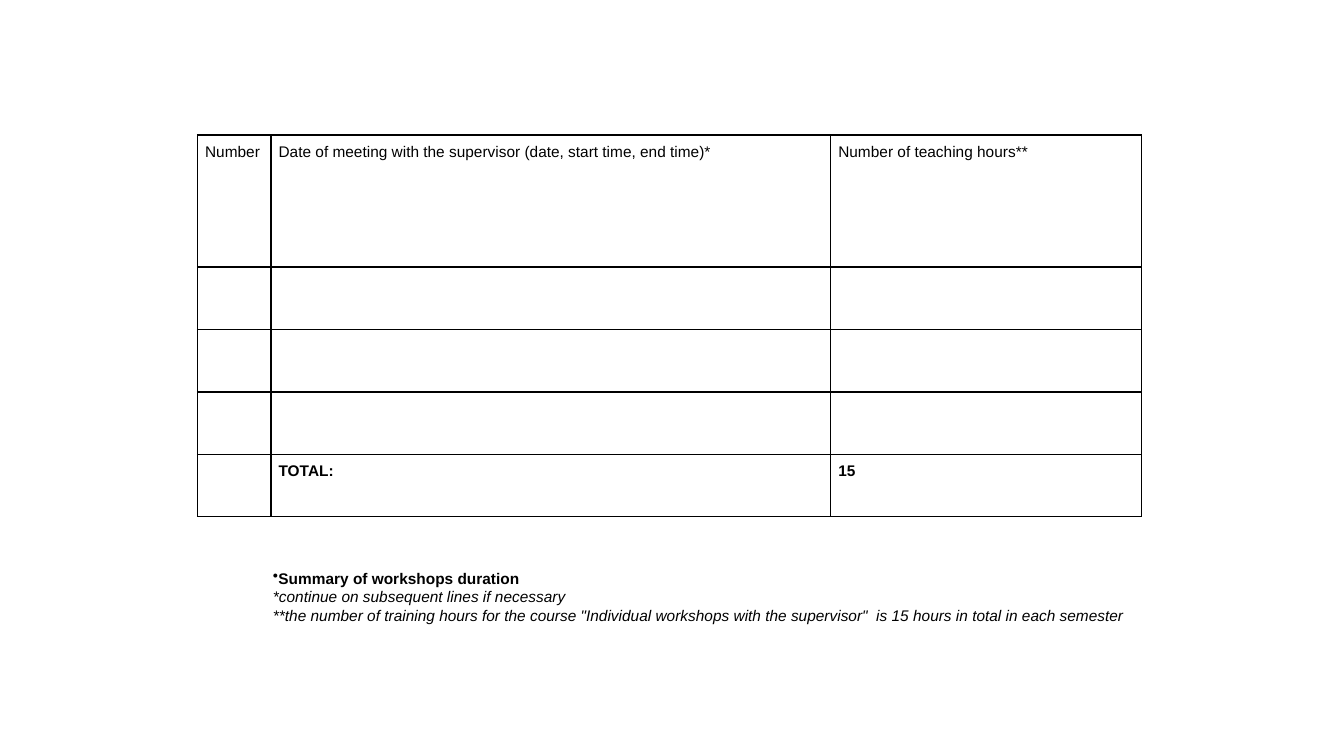
from dataclasses import dataclass

from lxml.etree import SubElement
from pptx import Presentation
from pptx.dml.color import RGBColor
from pptx.enum.text import MSO_ANCHOR as Anchor, MSO_AUTO_SIZE as AutoSize
from pptx.oxml.ns import qn
from pptx.slide import Slide
from pptx.table import _Cell as Cell
from pptx.text.text import _Paragraph as Paragraph
from pptx.util import Pt

BLACK = RGBColor(0x00, 0x00, 0x00)
FONT = "Arial"
TEXT_SIZE = 11
BORDER_WIDTH = 1
CELL_INSET = 5.4
COLUMN_WIDTHS = (52.5, 399.8, 222)
ROW_HEIGHTS = (94.3, 44.6, 44.6, 44.6, 44.6)
HEADINGS = (
    "Number",
    "Date of meeting with the supervisor (date, start time, end time)*",
    "Number of teaching hours**",
)
TOTALS = ("", "TOTAL:", "15")


@dataclass(frozen=True)
class Note:
    text: str
    bold: bool = False
    italic: bool = False
    bullet: bool = False


NOTES = (
    Note("Summary of workshops duration", bold=True, bullet=True),
    Note("*continue on subsequent lines if necessary", italic=True),
    Note(
        '**the number of training hours for the course "Individual workshops '
        'with the supervisor"  is 15 hours in total in each semester',
        italic=True,
    ),
)


def write_text(paragraph: Paragraph, text: str, *, bold: bool = False,
               italic: bool = False, bullet: bool = False,
               line_spacing: float = 1.0, space: float = 0) -> None:
    run = paragraph.add_run()
    run.text = text
    run.font.name = FONT
    run.font.size = Pt(TEXT_SIZE)
    run.font.bold = bold
    run.font.italic = italic
    run.font.color.rgb = BLACK
    paragraph.line_spacing = line_spacing
    paragraph.space_before = paragraph.space_after = Pt(space)
    if bullet:
        properties = paragraph._p.get_or_add_pPr()
        SubElement(properties, qn("a:buChar"), char="•")


def add_borders(cell: Cell) -> None:
    properties = cell._tc.get_or_add_tcPr()
    for index, side in enumerate(("lnL", "lnR", "lnT", "lnB")):
        line = properties.makeelement(qn(f"a:{side}"), {"w": str(Pt(BORDER_WIDTH))})
        fill = SubElement(line, qn("a:solidFill"))
        SubElement(fill, qn("a:srgbClr"), val=str(BLACK))
        properties.insert(index, line)


def add_meeting_table(slide: Slide) -> None:
    frame = slide.shapes.add_table(
        len(ROW_HEIGHTS), len(COLUMN_WIDTHS), Pt(141.1), Pt(96.5),
        Pt(sum(COLUMN_WIDTHS)), Pt(sum(ROW_HEIGHTS)),
    )
    table = frame.table
    table.first_row = table.horz_banding = False
    for column, width in zip(table.columns, COLUMN_WIDTHS):
        column.width = Pt(width)
    for row, height in zip(table.rows, ROW_HEIGHTS):
        row.height = Pt(height)
    for cell in table.iter_cells():
        cell.fill.background()
        cell.margin_left = cell.margin_right = Pt(CELL_INSET)
        cell.margin_top = cell.margin_bottom = 0
        add_borders(cell)
    last_row = len(ROW_HEIGHTS) - 1
    for row_index, texts, bold in ((0, HEADINGS, False), (last_row, TOTALS, True)):
        for column_index, text in enumerate(texts):
            if text:
                cell = table.cell(row_index, column_index)
                write_text(cell.text_frame.paragraphs[0], text, bold=bold,
                           line_spacing=1.5, space=6)


def add_notes_box(slide: Slide) -> None:
    box = slide.shapes.add_textbox(Pt(187.9), Pt(402.5), Pt(737.3), Pt(47.5))
    frame = box.text_frame
    frame.word_wrap = True
    frame.auto_size = AutoSize.SHAPE_TO_FIT_TEXT
    frame.vertical_anchor = Anchor.MIDDLE
    for index, note in enumerate(NOTES):
        paragraph = frame.add_paragraph() if index else frame.paragraphs[0]
        write_text(paragraph, note.text, bold=note.bold, italic=note.italic,
                   bullet=note.bullet)


def main() -> None:
    presentation = Presentation()
    presentation.slide_width = Pt(960)
    presentation.slide_height = Pt(540)
    slide = presentation.slides.add_slide(presentation.slide_layouts[6])
    add_meeting_table(slide)
    add_notes_box(slide)
    presentation.save("out.pptx")


if __name__ == "__main__":
    main()
